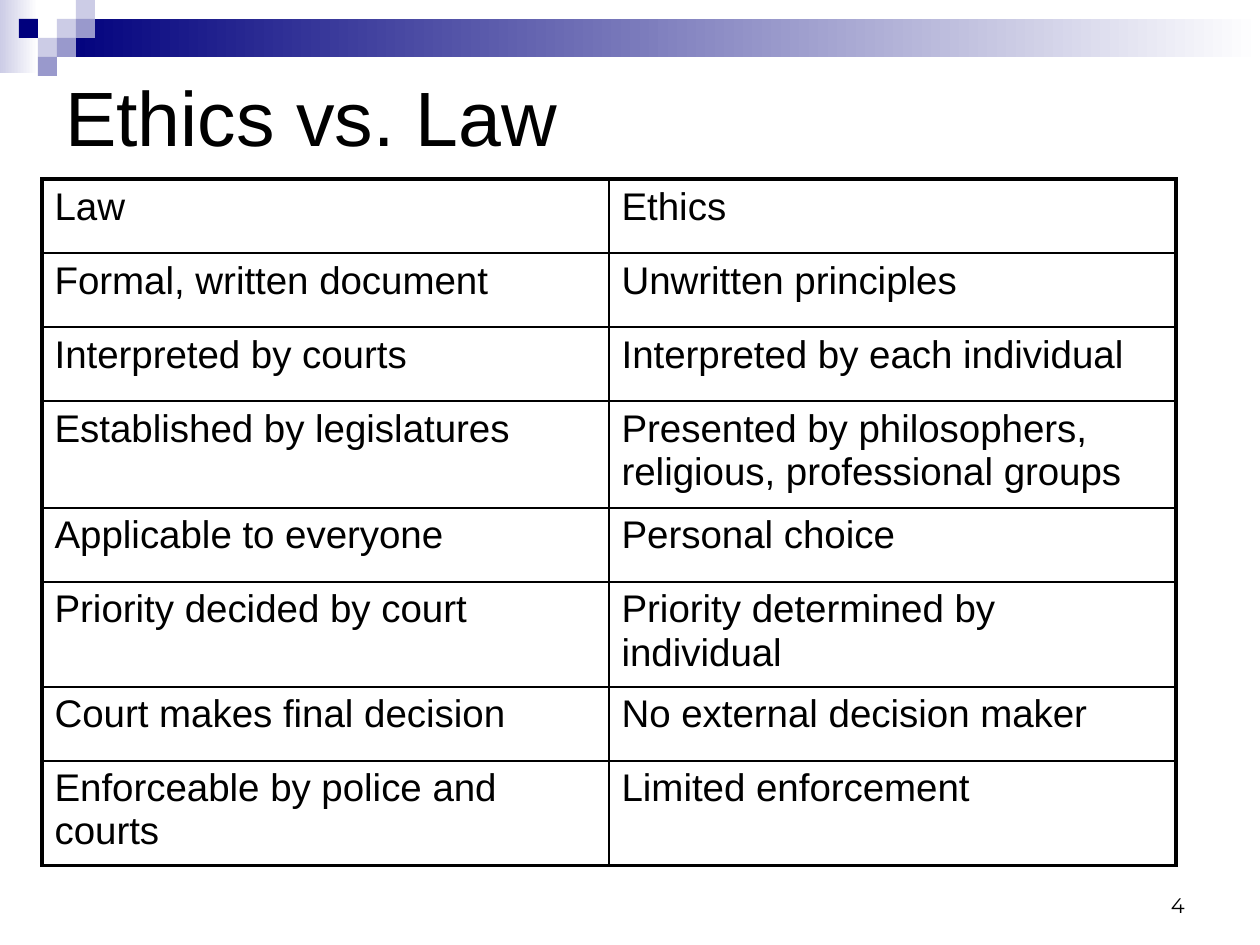
from dataclasses import dataclass

from lxml.etree import SubElement
from pptx import Presentation
from pptx.dml.color import RGBColor as RGB
from pptx.enum.shapes import MSO_SHAPE as SHAPE
from pptx.enum.text import MSO_ANCHOR as ANCHOR, PP_ALIGN as ALIGN
from pptx.oxml.ns import qn
from pptx.util import Emu, Pt


@dataclass(frozen=True)
class Theme:
    ink: str = "000000"
    paper: str = "FFFFFF"
    navy: str = "00007D"
    mid: str = "9999CC"
    pale: str = "CCCCE6"
    font: str = "Arial"
    number_font: str = "Montserrat"
    title_size: int = 44
    cell_size: int = 22
    number_size: int = 12
    outer_line: float = 2.25
    inner_line: float = 1


THEME = Theme()
PX_PER_INCH = 126
ROWS = [
    ("Law", "Ethics"),
    ("Formal, written document", "Unwritten principles"),
    ("Interpreted by courts", "Interpreted by each individual"),
    ("Established by legislatures",
     "Presented by philosophers, religious, professional groups"),
    ("Applicable to everyone", "Personal choice"),
    ("Priority decided by court", "Priority determined by individual"),
    ("Court makes final decision", "No external decision maker"),
    ("Enforceable by police and courts", "Limited enforcement"),
]
ROW_HEIGHT, TALL_ROW_HEIGHT, TALL_ROW = 74, 107, 3


def px(n):
    return Emu(round(n * 914400 / PX_PER_INCH))


def style_text(tf, size, font=THEME.font, align=ALIGN.LEFT):
    for p in tf.paragraphs:
        p.alignment = align
        for r in p.runs:
            r.font.size = Pt(size)
            r.font.name = font
            r.font.color.rgb = RGB.from_string(THEME.ink)


def add_block(slide, x, y, w, h, color, fade_to=None):
    sp = slide.shapes.add_shape(SHAPE.RECTANGLE, px(x), px(y), px(w), px(h))
    sp.shadow.inherit = False
    sp.line.fill.background()
    if fade_to:
        sp.fill.gradient()
        sp.fill.gradient_angle = 0
        for stop, shade, position in zip(sp.fill.gradient_stops, (color, fade_to), (0, 1)):
            stop.color.rgb = RGB.from_string(shade)
            stop.position = position
    else:
        sp.fill.solid()
        sp.fill.fore_color.rgb = RGB.from_string(color)


def add_banner(slide, x, y, w, unit):
    # Fading bars
    add_block(slide, x, y, 2 * unit, 73, THEME.pale, THEME.paper)
    add_block(slide, x + 3 * unit, y + unit, w - 3 * unit, 2 * unit, THEME.navy, THEME.paper)
    # Mosaic squares as (column, row, colour)
    for col, row, color in [
        (3, 1, THEME.pale), (4, 0, THEME.pale), (4, 1, THEME.mid),
        (2, 2, THEME.pale), (1, 1, THEME.navy), (3, 2, THEME.mid),
        (2, 3, THEME.mid),
    ]:
        add_block(slide, x + col * unit, y + row * unit, unit, unit, color)


def add_label(slide, x, y, w, h, text, size, font, anchor, align=ALIGN.LEFT):
    tf = slide.shapes.add_textbox(px(x), px(y), px(w), px(h)).text_frame
    tf.word_wrap = True
    tf.vertical_anchor = anchor
    tf.text = text
    style_text(tf, size, font, align)


def set_borders(cell, widths):
    """Draw the sides of a cell; they come before its fill in the XML."""
    tc_pr = cell._tc.get_or_add_tcPr()
    for i, (side, width) in enumerate(widths.items()):
        ln = SubElement(tc_pr, qn(f"a:ln{side}"), w=str(Pt(width)))
        tc_pr.insert(i, ln)
        fill = SubElement(ln, qn("a:solidFill"))
        SubElement(fill, qn("a:srgbClr"), val=THEME.ink)


def add_comparison(slide, x, y, w):
    heights = [TALL_ROW_HEIGHT if i == TALL_ROW else ROW_HEIGHT for i in range(len(ROWS))]
    n_cols = len(ROWS[0])
    frame = slide.shapes.add_table(len(ROWS), n_cols, px(x), px(y), px(w), px(sum(heights)))
    table = frame.table
    table.first_row = table.horz_banding = False
    for col in table.columns:
        col.width = px(w / n_cols)
    for i, (texts, height) in enumerate(zip(ROWS, heights)):
        table.rows[i].height = px(height)
        for j, text in enumerate(texts):
            cell = table.cell(i, j)
            cell.text = text
            style_text(cell.text_frame, THEME.cell_size)
            cell.fill.background()
            # Heavier lines around the outside
            on_edge = {"L": j == 0, "R": j == n_cols - 1,
                       "T": i == 0, "B": i == len(ROWS) - 1}
            set_borders(cell, {side: THEME.outer_line if edge else THEME.inner_line
                               for side, edge in on_edge.items()})


def main():
    prs = Presentation()
    prs.slide_width, prs.slide_height = px(1260), px(945)
    slide = prs.slides.add_slide(prs.slide_layouts[6])
    add_banner(slide, 0, 0, 1260, 19)
    add_label(slide, 903, 861, 294, 63, "4", THEME.number_size,
              THEME.number_font, ANCHOR.BOTTOM, ALIGN.RIGHT)
    add_label(slide, 53, 21, 1134, 189, "Ethics vs. Law", THEME.title_size,
              THEME.font, ANCHOR.MIDDLE)
    add_comparison(slide, 42, 179, 1134)
    prs.save("out.pptx")


if __name__ == "__main__":
    main()
